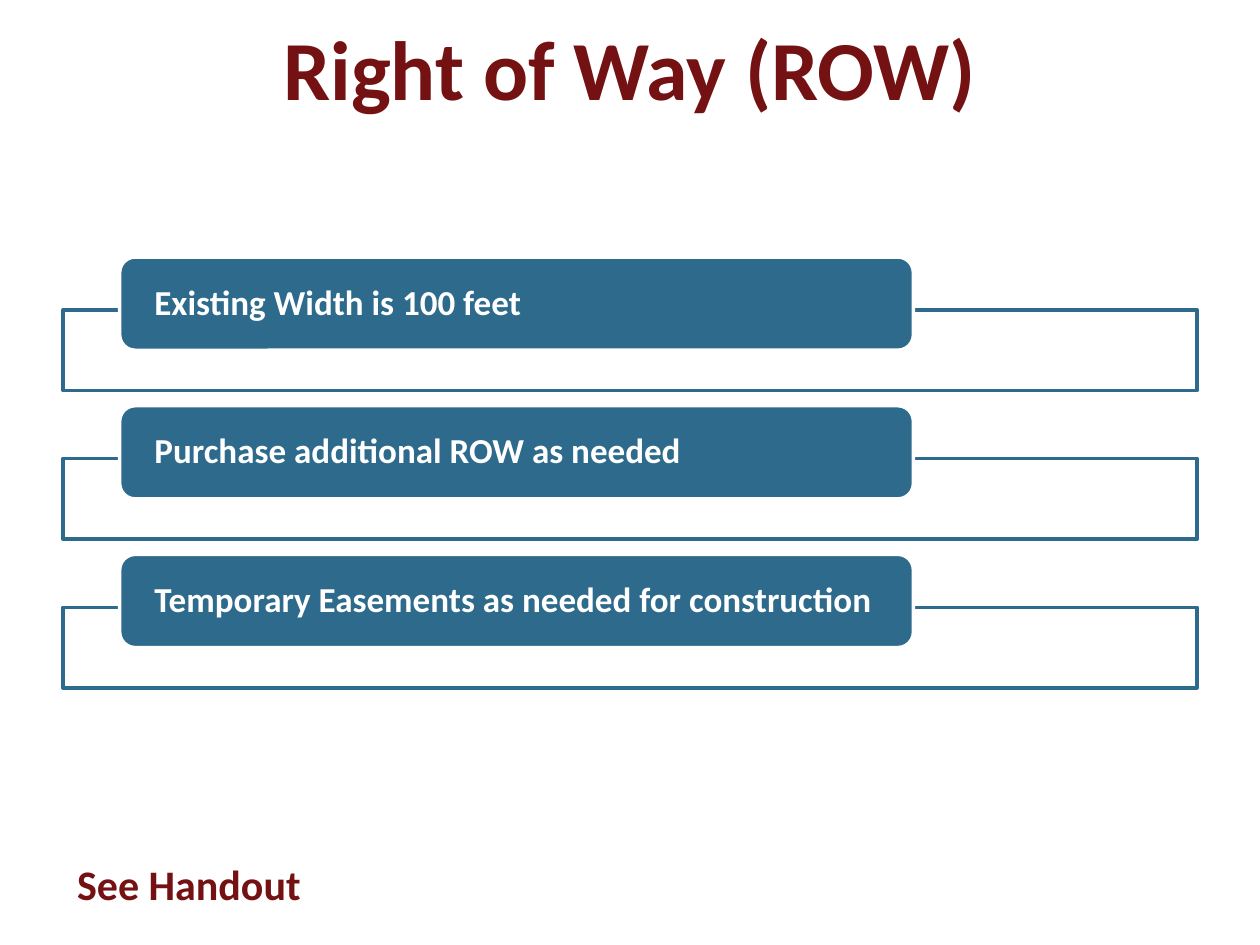
from dataclasses import dataclass

from pptx import Presentation
from pptx import util as u
from pptx.dml.color import RGBColor
from pptx.enum import shapes, text
from pptx.slide import Slide

COLORS = {"maroon": "741112", "blue": "2E6A8C", "white": "FFFFFF"}
ITEMS = [
    "Existing Width is 100 feet",
    "Purchase additional ROW as needed",
    "Temporary Easements as needed for construction",
]
FIRST_TOP, PITCH = 2.04, 1.18


@dataclass
class SlideBuilder:
    """Draw styled elements on the current slide."""

    slide: Slide
    font_name: str = "Calibri"

    def set_text(self, frame, content, size, color, align):
        frame.word_wrap = True
        frame.vertical_anchor = text.MSO_ANCHOR.MIDDLE
        paragraph = frame.paragraphs[0]
        paragraph.text = content
        paragraph.alignment = align
        font = paragraph.font
        font.name, font.size, font.bold = self.font_name, u.Pt(size), True
        font.color.rgb = RGBColor.from_string(COLORS[color])
        return paragraph

    def label(self, content, box, size):
        shape = self.slide.shapes.add_textbox(*map(u.Inches, box))
        self.set_text(shape.text_frame, content, size, "maroon", text.PP_ALIGN.CENTER)

    def box(self, kind, box, line, fill=None):
        shape = self.slide.shapes.add_shape(kind, *map(u.Inches, box))
        shape.shadow.inherit = False
        if fill:
            shape.fill.solid()
            shape.fill.fore_color.rgb = RGBColor.from_string(COLORS[fill])
        else:
            shape.fill.background()
        shape.line.color.rgb = RGBColor.from_string(COLORS[line])
        shape.line.width = u.Pt(2)
        return shape

    def list_item(self, content, top):
        self.box(shapes.MSO_SHAPE.RECTANGLE, (0.5, top + 0.42, 9, 0.64), "blue")
        tab = self.box(
            shapes.MSO_SHAPE.ROUNDED_RECTANGLE, (0.95, top, 6.3, 0.74), "white", "blue"
        )
        frame = tab.text_frame
        frame.margin_left = frame.margin_right = u.Inches(0.24)
        frame.margin_top = frame.margin_bottom = 0
        paragraph = self.set_text(frame, content, 20, "white", text.PP_ALIGN.LEFT)
        paragraph.line_spacing = 0.9


def main():
    presentation = Presentation()
    presentation.slide_width = u.Inches(10)
    presentation.slide_height = u.Inches(7.5)
    builder = SlideBuilder(presentation.slides.add_slide(presentation.slide_layouts[6]))
    builder.label("Right of Way (ROW)", (0.5, 0.03, 9, 1), 48)
    builder.label("See Handout", (0.5, 6.76, 2, 0.5), 24)
    for index, item in enumerate(ITEMS):
        builder.list_item(item, FIRST_TOP + index * PITCH)
    presentation.save("out.pptx")


if __name__ == "__main__":
    main()
